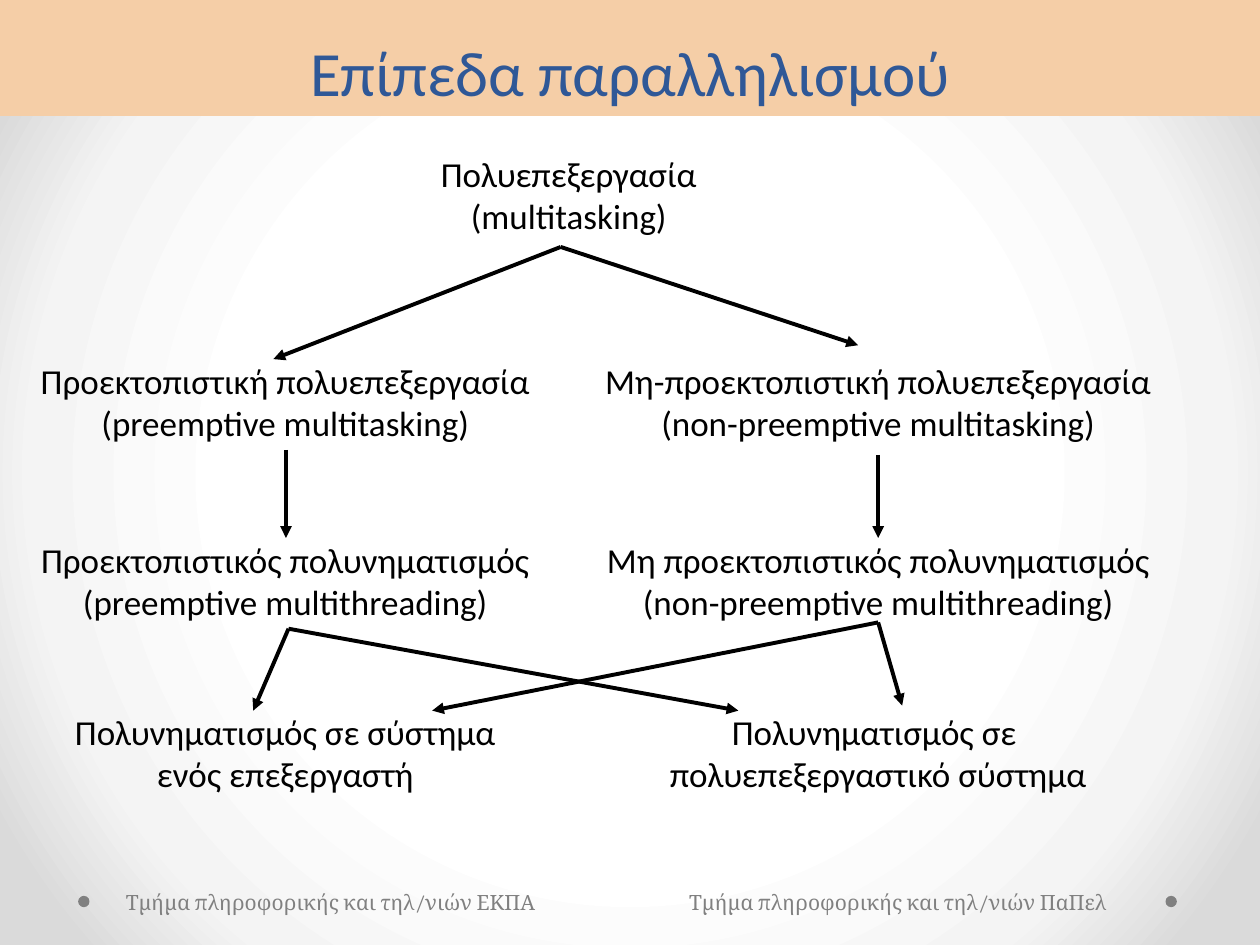
from lxml.etree import SubElement
from pptx import Presentation
from pptx.dml.color import RGBColor
from pptx.enum.shapes import MSO_CONNECTOR, MSO_SHAPE
from pptx.enum.text import MSO_ANCHOR, MSO_AUTO_SIZE, PP_ALIGN
from pptx.oxml import parse_xml
from pptx.oxml.ns import nsdecls, qn
from pptx.util import Inches, Pt

COLS, ROWS = 100, 75
INK, GREY, BLUE, PEACH = "000000", "808080", "2F5897", "F5CEA7"


def hue(code):
    return RGBColor.from_string(code)


class Deck:
    """Style and current slide; lengths are grid columns and rows."""

    def __init__(self):
        self.prs = Presentation()
        self.prs.slide_width, self.prs.slide_height = Inches(10), Inches(7.5)
        self.slide = self.prs.slides.add_slide(self.prs.slide_layouts[5])
        self.shapes = self.slide.shapes

    def spot(self, x, y):
        return (round(x * self.prs.slide_width / COLS),
                round(y * self.prs.slide_height / ROWS))

    def glow(self, stops):
        self.slide.background.fill.gradient()
        grad = self.slide.element.find(".//" + qn("a:gradFill"))
        marks = "".join(
            f'<a:gs pos="{pos * 1000}"><a:srgbClr val="{code}"/></a:gs>'
            for pos, code in stops)
        new = parse_xml(
            f'<a:gradFill {nsdecls("a")} rotWithShape="1">'
            f'<a:gsLst>{marks}</a:gsLst><a:path path="circle">'
            '<a:fillToRect l="50000" t="50000" r="50000" b="50000"/>'
            '</a:path></a:gradFill>')
        grad.getparent().replace(grad, new)

    def run(self, para, text, size, face, code):
        run = para.add_run()
        run.text = text
        run.font.size, run.font.name = Pt(size), face
        run.font.color.rgb = hue(code)

    def title(self, text, high):
        box = self.shapes.title
        box.left, box.top = 0, 0
        box.width, box.height = self.spot(COLS, high)
        box.fill.solid()
        box.fill.fore_color.rgb = hue(PEACH)
        frame = box.text_frame
        frame.auto_size = MSO_AUTO_SIZE.NONE
        frame.vertical_anchor = MSO_ANCHOR.BOTTOM
        para = frame.paragraphs[0]
        para.alignment, para.line_spacing = PP_ALIGN.CENTER, Pt(58)
        self.run(para, text, 36, "Calibri", BLUE)

    def frame(self, x, y, wide, high):
        box = self.shapes.add_textbox(*self.spot(x, y), *self.spot(wide, high))
        box.text_frame.word_wrap = True
        return box.text_frame

    def node(self, x, y, wide, high, lines):
        frame = self.frame(x, y, wide, high)
        frame.margin_left = frame.margin_right = 0
        frame.margin_top = frame.margin_bottom = 0
        for num, line in enumerate(lines):
            para = frame.add_paragraph() if num else frame.paragraphs[0]
            para.alignment = PP_ALIGN.CENTER
            self.run(para, line, 20, "Calibri", INK)

    def foot(self, x, wide, text):
        frame = self.frame(x, 70.1, wide, 3)
        frame.auto_size = MSO_AUTO_SIZE.SHAPE_TO_FIT_TEXT
        self.run(frame.paragraphs[0], text, 12, "Cambria", GREY)

    def dot(self, x):
        dot = self.shapes.add_shape(
            MSO_SHAPE.OVAL, *self.spot(x, 71.1), *self.spot(0.9, 0.9))
        dot.shadow.inherit = False
        dot.fill.solid()
        dot.fill.fore_color.rgb = hue(GREY)
        dot.line.fill.background()

    def arrow(self, start, end):
        link = self.shapes.add_connector(
            MSO_CONNECTOR.STRAIGHT, *self.spot(*start), *self.spot(*end))
        link.line.width = Pt(2.25)
        link.line.color.rgb = hue(INK)
        SubElement(link.line._get_or_add_ln(), qn("a:tailEnd"), type="triangle")
        SubElement(link._element.spPr, qn("a:effectLst"))


def main():
    deck = Deck()
    deck.glow([(50, "FFFFFF"), (76, "F4F4F4"), (92, "DADADA")])
    deck.title("Επίπεδα παραλληλισμού", 9.2)

    # Footer
    for x in (6.2, 92.5):
        deck.dot(x)
    deck.foot(9, 39.4, "Τμήμα πληροφορικής και τηλ/νιών ΕΚΠΑ")
    deck.foot(53.7, 35.8, "Τμήμα πληροφορικής και τηλ/νιών ΠαΠελ")

    # Tree: the root, then rows of a left and a right node
    deck.node(29, 12.1, 32.3, 6.9, ["Πολυεπεξεργασία", "(multitasking)"])
    rows = [
        (28.5, ["Προεκτοπιστική πολυεπεξεργασία", "(preemptive multitasking)"],
         ["Μη-προεκτοπιστική πολυεπεξεργασία",
          "(non-preemptive multitasking)"]),
        (42.7, ["Προεκτοπιστικός πολυνηματισμός",
                "(preemptive multithreading)"],
         ["Μη προεκτοπιστικός πολυνηματισμός",
          "(non-preemptive multithreading)"]),
        (56.4, ["Πολυνηματισμός σε σύστημα", "ενός επεξεργαστή"],
         ["Πολυνηματισμός σε ", "πολυεπεξεργαστικό σύστημα"]),
    ]
    for y, left, right in rows:
        deck.node(0.8, y, 43.7, 8, left)
        deck.node(46.1, y, 47.2, 8, right)

    # Arrows, grouped by where they start
    fans = {
        (44.5, 19.6): [(21.7, 28.5), (68.1, 27.4)],
        (22.7, 35.7): [(22.7, 42.7)],
        (69.7, 36.1): [(69.7, 42.7)],
        (22.9, 49.9): [(58.6, 56.4), (20.1, 56.4)],
        (69.7, 49.4): [(71.6, 56), (34.3, 56.4)],
    }
    for start, ends in fans.items():
        for end in ends:
            deck.arrow(start, end)

    deck.prs.save("out.pptx")


if __name__ == "__main__":
    main()
